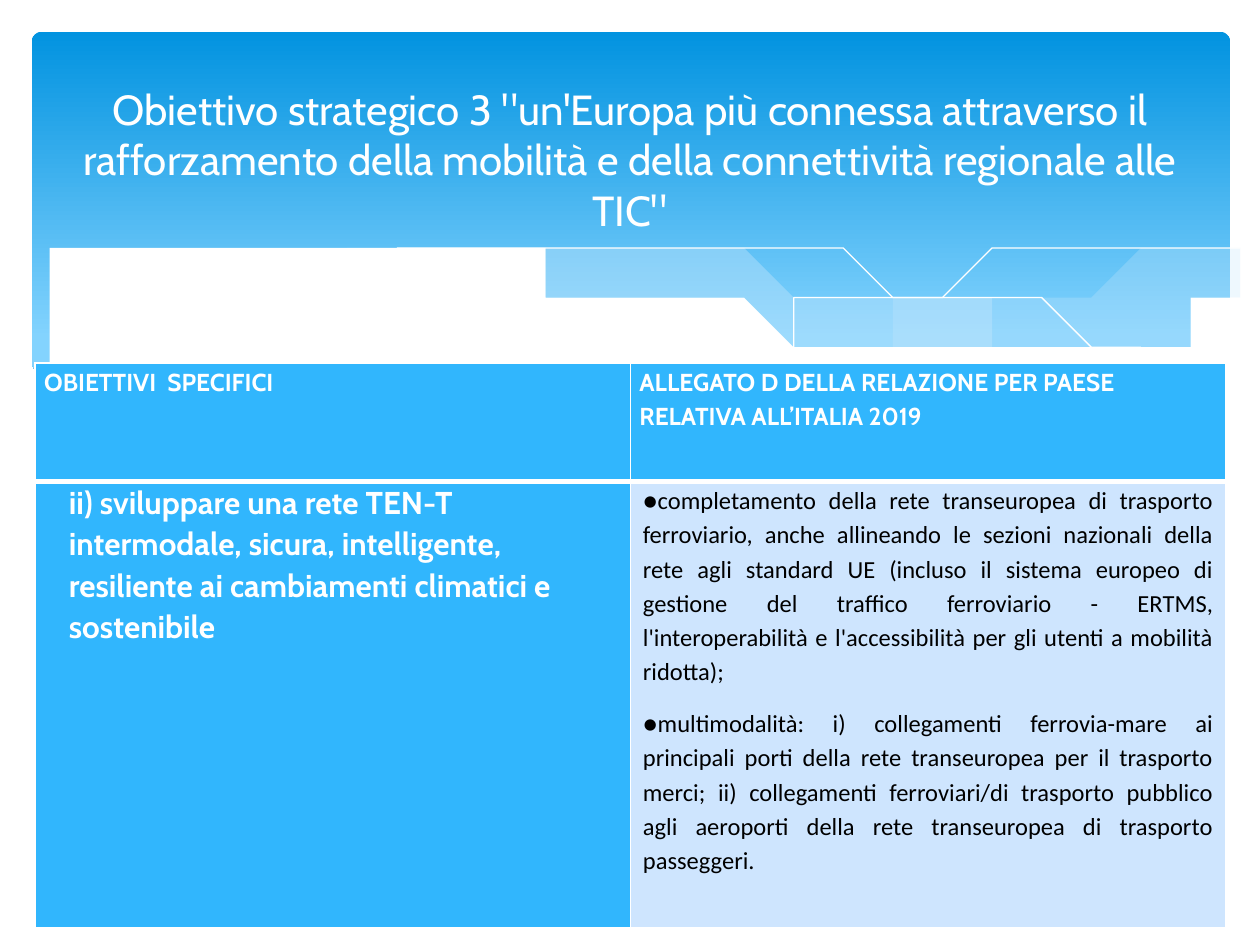
from dataclasses import dataclass

from lxml import etree
from pptx import Presentation
from pptx.dml.color import RGBColor
from pptx.enum.shapes import MSO_SHAPE
from pptx.enum.text import MSO_ANCHOR, PP_ALIGN
from pptx.oxml.ns import qn
from pptx.util import Cm, Pt

ROUNDED = MSO_SHAPE.ROUNDED_RECTANGLE
MIDDLE = MSO_ANCHOR.MIDDLE
LEFT, CENTER, JUSTIFY = PP_ALIGN.LEFT, PP_ALIGN.CENTER, PP_ALIGN.JUSTIFY


@dataclass(frozen=True)
class Theme:
    white: str = "FFFFFF"
    black: str = "000000"
    sky_top: str = "0293E0"
    sky_bottom: str = "83D3FE"
    mist: str = "C6E7FC"
    accent: str = "31B6FD"
    pale: str = "CEE5FE"
    heading_font: str = "Cabin"
    body_font: str = "Calibri"
    title_size: int = 24
    goal_size: int = 18
    text_size: int = 14


THEME = Theme()

TITLE = (
    "Obiettivo strategico 3 \"un'Europa più connessa attraverso il rafforzamento "
    "della mobilità e della connettività regionale alle TIC\""
)
HEADERS = (
    "OBIETTIVI  SPECIFICI",
    "ALLEGATO D DELLA RELAZIONE PER PAESE RELATIVA ALL’ITALIA 2019",
)
GOAL = (
    "ii) sviluppare una rete TEN-T intermodale, sicura, intelligente, "
    "resiliente ai cambiamenti climatici e sostenibile"
)
PRIORITIES = (
    "●completamento della rete transeuropea di trasporto ferroviario, anche "
    "allineando le sezioni nazionali della rete agli standard UE (incluso il "
    "sistema europeo di gestione del traffico ferroviario - ERTMS, "
    "l'interoperabilità e l'accessibilità per gli utenti a mobilità ridotta);",
    "●multimodalità: i) collegamenti ferrovia-mare ai principali porti della rete "
    "transeuropea per il trasporto merci; ii) collegamenti ferroviari/di trasporto "
    "pubblico agli aeroporti della rete transeuropea di trasporto passeggeri.",
)

RIGHT_WAVE = (
    [(24.77, 5.08), (23.4, 5.33), (21.87, 5.66), (19.79, 6.15), (16.79, 6.73)],
    [(16.79, 6.73), (18.26, 6.91), (20.12, 7.04), (21.95, 7), (23.39, 6.73),
     (24.77, 6.27)],
)
LONG_WAVE = (
    [(22.68, 6.93), (20.5, 6.6), (17.93, 6.1), (15.98, 5.64), (14.1, 5.21),
     (12.42, 4.93), (10.67, 4.75), (9.17, 4.7), (7.26, 4.85)],
    [(7.26, 4.85), (9.19, 5.16), (11.4, 5.64), (14.38, 6.3), (16.51, 6.71),
     (18.34, 6.96), (19.94, 7.06), (21.54, 7.04), (22.68, 6.93)],
)
FALLING_LINE = (
    [(7.85, 4.95), (8.97, 4.8), (10.57, 4.75), (12.42, 4.83), (14.78, 5.08),
     (17.65, 5.56), (20.19, 6.12), (23.04, 6.91)],
)
RISING_LINE = (
    [(15.57, 6.53), (17.65, 5.97), (19.71, 5.49), (22, 5.05), (23.47, 4.83),
     (24.77, 4.7)],
)
WHITE_WAVE = (
    [(24.82, 6.25), (23.37, 6.73), (21.59, 6.99), (19.76, 7.01), (17.48, 6.81),
     (14.71, 6.35), (11.35, 5.59), (8.64, 5), (6.35, 4.72), (4.5, 4.67),
     (3.02, 4.75), (1.93, 4.95), (1.02, 5.21), (0.58, 5.41)],
    [(0.58, 8.36), (24.82, 8.36)],
)


def rgb(color):
    return RGBColor.from_string(color)


def smooth_curve(knots, steps=6):
    if len(knots) < 3:
        return knots
    padded = [knots[0], *knots, knots[-1]]
    points = [knots[0]]
    for a, b, c, d in zip(padded, padded[1:], padded[2:], padded[3:]):
        for step in range(1, steps + 1):
            t = step / steps
            points.append(tuple(
                (2 * q + (r - p) * t + (2 * p - 5 * q + 4 * r - s) * t**2
                 + (3 * q - p - 3 * r + s) * t**3) / 2
                for p, q, r, s in zip(a, b, c, d)
            ))
    return points


def add_curve(slide, edges, closed):
    points = [point for edge in edges for point in smooth_curve(edge)]
    builder = slide.shapes.build_freeform(*points[0], scale=Cm(1))
    builder.add_line_segments(points[1:], close=closed)
    curve = builder.convert_to_shape()
    curve.shadow.inherit = False
    return curve


def add_wave(slide, edges, color, opacity=100):
    wave = add_curve(slide, edges, True)
    wave.fill.solid()
    wave.fill.fore_color.rgb = rgb(color)
    wave.line.fill.background()
    if opacity < 100:
        tint = wave.fill._xPr.find(qn("a:solidFill"))[0]
        etree.SubElement(tint, qn("a:alpha"), val=str(opacity * 1000))


def add_hairline(slide, edges):
    hairline = add_curve(slide, edges, False)
    hairline.fill.background()
    hairline.line.color.rgb = rgb(THEME.white)
    hairline.line.width = Pt(0)


def add_banner(slide):
    banner = slide.shapes.add_shape(ROUNDED, Cm(0.64), Cm(0.64), Cm(24.16), Cm(6.86))
    banner.adjustments[0] = 0.03
    banner.shadow.inherit = False
    banner.line.fill.background()
    banner.fill.gradient()
    banner.fill.gradient_angle = 270
    colors = (THEME.sky_top, THEME.sky_bottom)
    for stop, color, position in zip(banner.fill.gradient_stops, colors, (0, 0.9)):
        stop.color.rgb = rgb(color)
        stop.position = position


def style_text(paragraph, size, color, font=THEME.heading_font, bold=False,
               align=LEFT, spacing=1.0, after=0):
    paragraph.font.size = Pt(size)
    paragraph.font.name = font
    paragraph.font.bold = bold
    paragraph.font.color.rgb = rgb(color)
    paragraph.alignment = align
    paragraph.line_spacing = spacing
    paragraph.space_after = Pt(after)


def add_title(slide):
    title = slide.shapes.add_textbox(Cm(1.27), Cm(0.94), Cm(22.86), Cm(3.48))
    frame = title.text_frame
    frame.word_wrap = True
    frame.vertical_anchor = MIDDLE
    frame.margin_top = Cm(1.17)
    frame.text = TITLE
    style_text(frame.paragraphs[0], THEME.title_size, THEME.white, align=CENTER)


def set_borders(cell, bottom=1):
    properties = cell._tc.get_or_add_tcPr()
    widths = {"lnL": 1, "lnR": 1, "lnT": 1, "lnB": bottom}
    for index, (side, width) in enumerate(widths.items()):
        border = etree.Element(qn(f"a:{side}"), w=str(Pt(width)))
        fill = etree.SubElement(border, qn("a:solidFill"))
        etree.SubElement(fill, qn("a:srgbClr"), val=THEME.white)
        properties.insert(index, border)


def fill_cell(cell, texts, background, side_margin=0.18, bottom=1, **style):
    cell.margin_left = cell.margin_right = Cm(side_margin)
    cell.margin_top = cell.margin_bottom = 0
    cell.fill.solid()
    cell.fill.fore_color.rgb = rgb(background)
    set_borders(cell, bottom)
    cell.text = "\n".join(texts)
    for paragraph in cell.text_frame.paragraphs:
        style_text(paragraph, **style)


def add_objectives(slide):
    frame = slide.shapes.add_table(2, 2, Cm(0.71), Cm(7.32), Cm(24), Cm(11.38))
    table = frame.table
    table.first_row = table.horz_banding = False
    table.rows[0].height, table.rows[1].height = Cm(2.39), Cm(8.99)
    for column, header in enumerate(HEADERS):
        fill_cell(table.cell(0, column), [header], THEME.accent, bottom=3,
                  size=THEME.text_size, color=THEME.white, bold=True, spacing=1.15)
    goal = table.cell(1, 0)
    fill_cell(goal, [GOAL], THEME.accent, size=THEME.goal_size, color=THEME.white,
              bold=True, spacing=1.07, after=8)
    indent = goal.text_frame.paragraphs[0]._p.get_or_add_pPr()
    indent.set("marL", str(Cm(0.5)))
    fill_cell(table.cell(1, 1), PRIORITIES, THEME.pale, side_margin=0.25,
              size=THEME.text_size, color=THEME.black, font=THEME.body_font,
              align=JUSTIFY, spacing=1.15, after=10)


def main():
    deck = Presentation()
    deck.slide_width, deck.slide_height = Cm(25.4), Cm(19.05)
    slide = deck.slides.add_slide(deck.slide_layouts[6])
    add_banner(slide)
    add_wave(slide, RIGHT_WAVE, THEME.mist, 29)
    add_wave(slide, LONG_WAVE, THEME.mist, 40)
    add_hairline(slide, FALLING_LINE)
    add_hairline(slide, RISING_LINE)
    add_wave(slide, WHITE_WAVE, THEME.white)
    add_title(slide)
    add_objectives(slide)
    deck.save("out.pptx")


if __name__ == "__main__":
    main()
